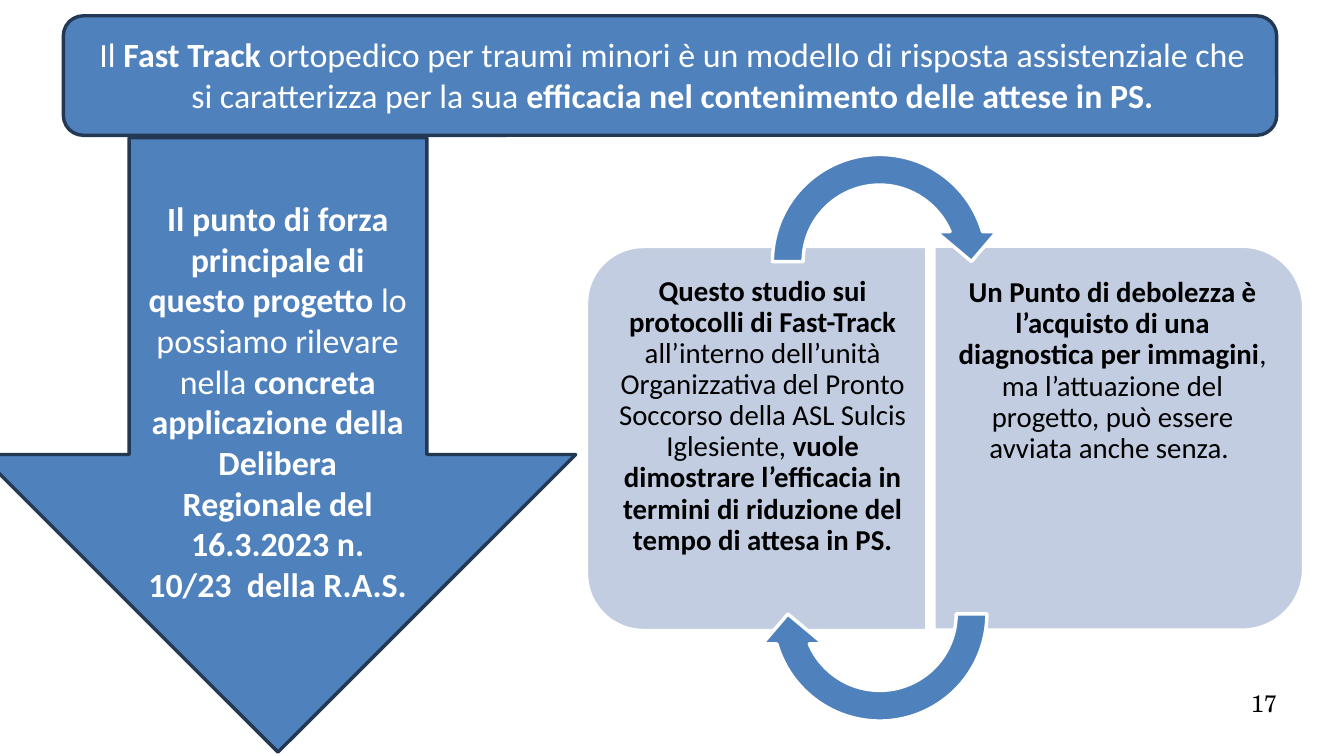
from pptx import Presentation
from pptx.dml.color import RGBColor
from pptx.enum.shapes import MSO_SHAPE as SHAPE
from pptx.enum.text import PP_ALIGN as ALIGN
from pptx.util import Cm, Pt

# Content: runs are (text, bold)
HEADLINE = [
    ("Il ", False),
    ("Fast Track ", True),
    ("ortopedico per traumi minori è un modello di risposta assistenziale "
     "che si caratterizza per la sua ", False),
    ("efficacia nel contenimento delle attese in PS.", True),
]
STRENGTH = [
    ("Il punto di forza principale di questo progetto ", True),
    ("lo possiamo rilevare nella ", False),
    ("concreta applicazione della Delibera Regionale del 16.3.2023 "
     "n. 10/23  della R.A.S.", True),
]
STUDY = [
    ("Questo studio sui protocolli di Fast-Track ", True),
    ("all’interno dell’unità Organizzativa del Pronto Soccorso della ASL "
     "Sulcis Iglesiente, ", False),
    ("vuole dimostrare l’efficacia in termini di riduzione del tempo di "
     "attesa in PS.", True),
]
WEAKNESS = [
    ("Un Punto di debolezza è l’acquisto di una diagnostica per immagini", True),
    (", ma l’attuazione del progetto, può essere avviata anche senza. ", False),
]
PAGE_NUMBER = [("17", False)]

THEME = {
    "blue": "4F81BD", "navy": "233953", "pale": "C2CDE1",
    "white": "FFFFFF", "black": "000000",
    "font": "Calibri", "number_font": "TeX Gyre Schola",
    "large": 20, "medium": 17, "small": 14, "line": 2,
}

# Layout in cm: left, top, width, height
SLIDE = (27.99, 15.75)
BANNER = (1.32, 0.33, 25.27, 2.49)
BIG_ARROW = (-0.41, 2.87, 12.4, 12.8)
CARDS = [  # unrotated box, rotation, text box, insets, runs
    ((11.76, 5.59, 8, 7.09), 270, (12.57, 5.46, 6.73, 7.32),
     (0.18, 0.3, 0.28, 0.3), STUDY),
    ((19.3, 5.28, 8, 7.7), 90, (19.46, 5.49, 7.32, 7.24),
     (0.28, 0.3, 0.18, 0.3), WEAKNESS),
]
CARD_CORNERS = (0.167, 0)
CYCLE_LEFT, CYCLE_SIZE = 15.77, 5.1
CYCLE_ARROWS = [(2.9, 0), (10.24, 180)]  # top, rotation
CYCLE_BEND = (0.125, 11.423, 204.577, 108, 0.125)
INSETS = (0.25, 0.13, 0.25, 0.13)


def color(name):
    return RGBColor.from_string(THEME[name])


def add_block(s, kind, box, fill, line, rotation=0, adjustments=()):
    sp = s.shapes.add_shape(kind, *map(Cm, box))
    sp.shadow.inherit = False
    sp.fill.solid()
    sp.fill.fore_color.rgb = color(fill)
    sp.line.color.rgb = color(line)
    sp.line.width = Pt(THEME["line"])
    sp.rotation = rotation
    for i, value in enumerate(adjustments):
        sp.adjustments[i] = value


def add_text(s, box, runs, size, ink, font="font", align=ALIGN.CENTER,
             insets=INSETS, spacing=1.0):
    tf = s.shapes.add_textbox(*map(Cm, box)).text_frame
    tf.word_wrap = True
    (tf.margin_left, tf.margin_top,
     tf.margin_right, tf.margin_bottom) = map(Cm, insets)
    p = tf.paragraphs[0]
    p.alignment = align
    p.line_spacing = spacing
    for text, bold in runs:
        r = p.add_run()
        r.text = text
        r.font.name = THEME[font]
        r.font.size = Pt(THEME[size])
        r.font.bold = bold
        r.font.color.rgb = color(ink)


def main():
    prs = Presentation()
    prs.slide_width, prs.slide_height = map(Cm, SLIDE)
    s = prs.slides.add_slide(prs.slide_layouts[6])

    # Strength arrow and headline banner
    add_block(s, SHAPE.DOWN_ARROW, BIG_ARROW, "blue", "navy")
    add_block(s, SHAPE.ROUNDED_RECTANGLE, BANNER, "blue", "navy")
    add_text(s, (1.8, 0.58, 24.41, 1.96), HEADLINE, "large", "white")
    add_text(s, (2.79, 3.99, 5.99, 8.81), STRENGTH, "large", "white")

    # Study and weakness cards
    for box, rotation, text_box, insets, runs in CARDS:
        add_block(s, SHAPE.ROUND_2_SAME_RECTANGLE, box, "pale", "white",
                  rotation, CARD_CORNERS)
        add_text(s, text_box, runs, "medium", "black", insets=insets, spacing=0.9)

    # Cycle arrows joining the cards
    for top, rotation in CYCLE_ARROWS:
        add_block(s, SHAPE.CIRCULAR_ARROW, (CYCLE_LEFT, top, CYCLE_SIZE, CYCLE_SIZE),
                  "blue", "white", rotation, CYCLE_BEND)

    # Page number
    add_text(s, (20.07, 14.35, 6.53, 1.09), PAGE_NUMBER, "small", "black",
             "number_font", ALIGN.RIGHT, (0, 0, 0, 0))

    prs.save("out.pptx")


if __name__ == "__main__":
    main()
